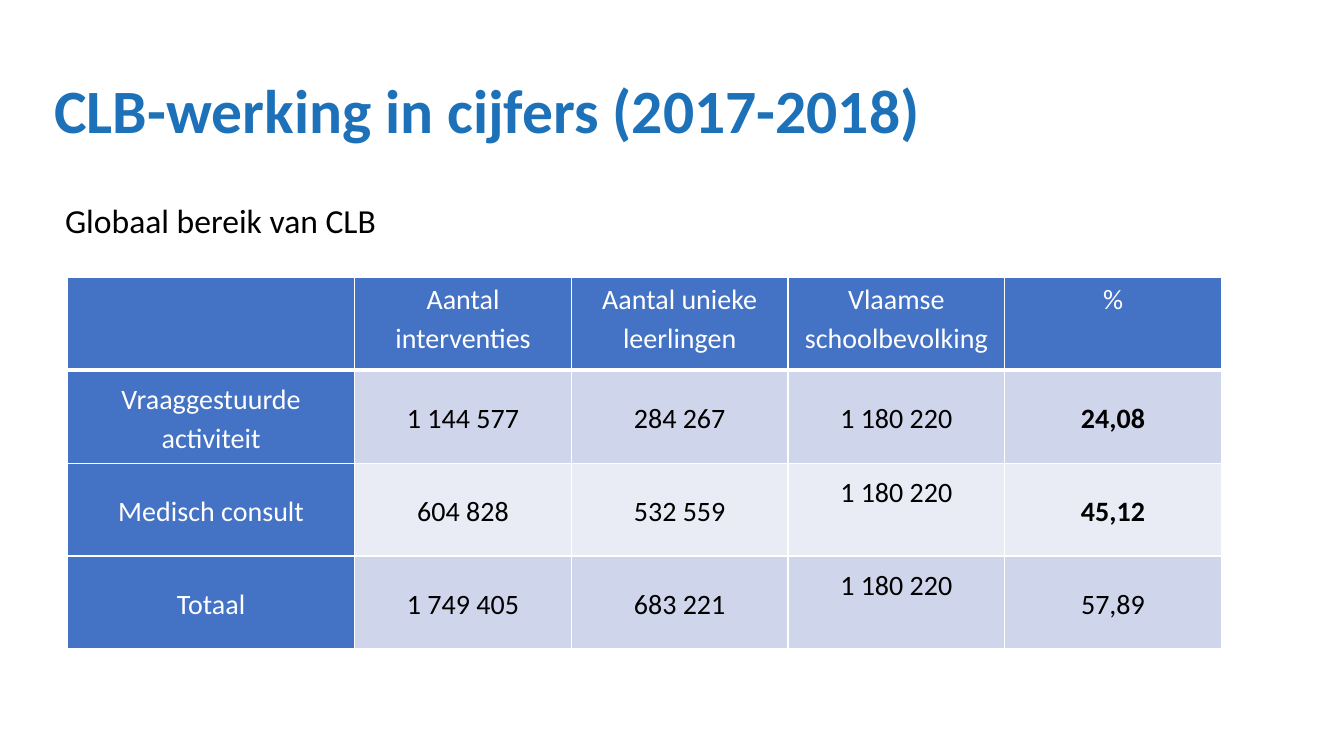
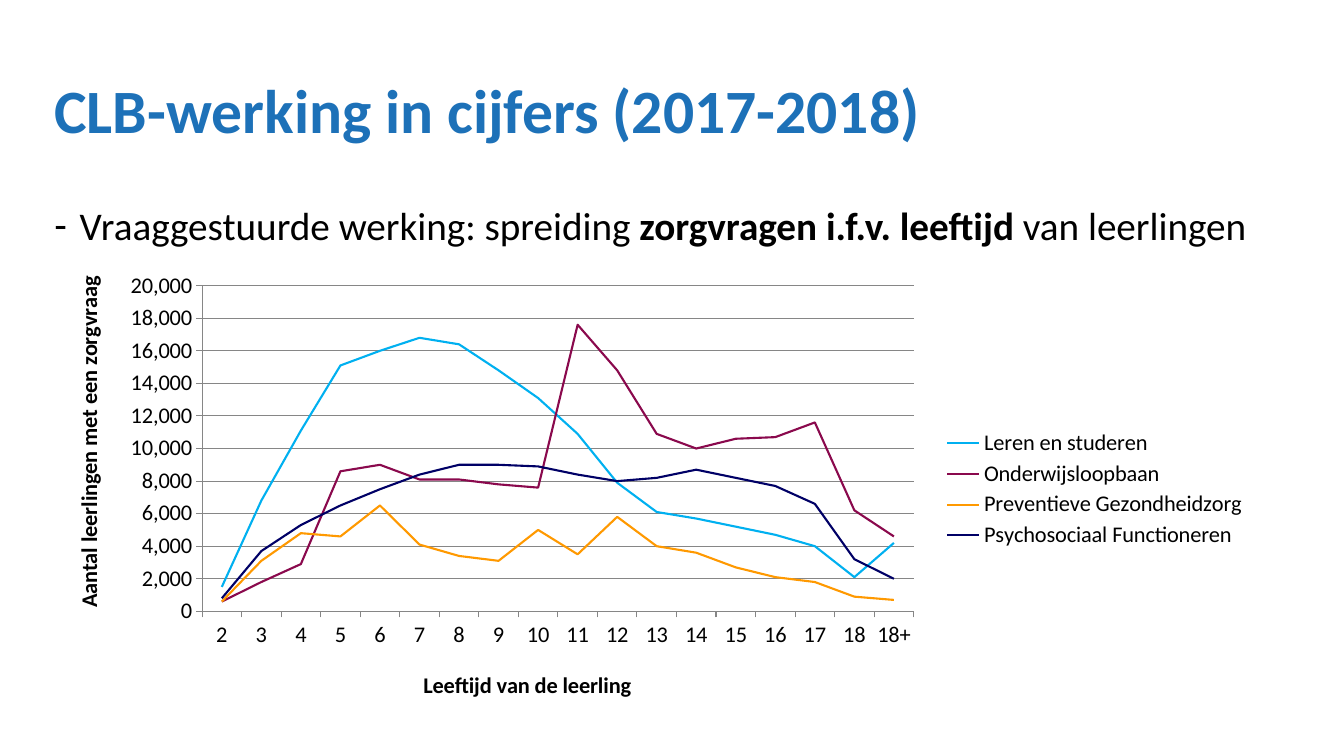
from lxml.etree import SubElement
from pptx import Presentation
from pptx.chart.data import CategoryChartData
from pptx.dml.color import RGBColor
from pptx.enum.chart import XL_CHART_TYPE, XL_LEGEND_POSITION, XL_TICK_MARK
from pptx.enum.text import MSO_ANCHOR, PP_ALIGN
from pptx.oxml.ns import qn
from pptx.util import Cm, Pt

FONT = "Calibri"
BLACK = RGBColor(0x00, 0x00, 0x00)
WHITE = RGBColor(0xFF, 0xFF, 0xFF)
TITLE_BLUE = RGBColor(0x1D, 0x71, 0xB8)
TABLE_BLUE = RGBColor(0x44, 0x72, 0xC4)
BANDS = (RGBColor(0xCF, 0xD5, 0xEA), RGBColor(0xE9, 0xEB, 0xF5))
GRID_GREY = RGBColor(0x86, 0x86, 0x86)

TITLE = "CLB-werking in cijfers (2017-2018)"

REACH = [
    ["", "Aantal interventies", "Aantal unieke leerlingen", "Vlaamse schoolbevolking", "%"],
    ["Vraaggestuurde activiteit", "1 144 577", "284 267", "1 180 220", "24,08"],
    ["Medisch consult", "604 828", "532 559", "1 180 220", "45,12"],
    ["Totaal", "1 749 405", "683 221", "1 180 220", "57,89"],
]
BOLD_CELLS = {(1, 4), (2, 4)}
RAISED_CELLS = {(2, 3), (3, 3)}

AGES = [str(age) for age in range(2, 19)] + ["18+"]
CARE_QUESTIONS = [
    ("Leren en studeren", RGBColor(0x00, 0xB0, 0xF0),
     [1500, 6800, 11100, 15100, 16000, 16800, 16400, 14800, 13100,
      10900, 7900, 6100, 5700, 5200, 4700, 4000, 2100, 4200]),
    ("Onderwijsloopbaan", RGBColor(0x8A, 0x09, 0x4D),
     [600, 1800, 2900, 8600, 9000, 8100, 8100, 7800, 7600,
      17600, 14800, 10900, 10000, 10600, 10700, 11600, 6200, 4600]),
    ("Preventieve Gezondheidzorg", RGBColor(0xFF, 0x99, 0x00),
     [600, 3100, 4800, 4600, 6500, 4100, 3400, 3100, 5000,
      3500, 5800, 4000, 3600, 2700, 2100, 1800, 900, 700]),
    ("Psychosociaal Functioneren", RGBColor(0x00, 0x00, 0x66),
     [800, 3700, 5300, 6500, 7500, 8400, 9000, 9000, 8900,
      8400, 8000, 8200, 8700, 8200, 7700, 6600, 3200, 2000]),
]


def place(part, inner=False, **fractions):
    """Give a chart part a manual layout, in fractions of the chart."""
    layout = part.find(qn("c:layout"))
    if layout is None:
        layout = SubElement(part, qn("c:layout"))
        before = [part.find(qn(tag)) for tag in ("c:tx", "c:legendPos")]
        anchor = next((item for item in before if item is not None), None)
        if anchor is None:
            part.insert(0, layout)
        else:
            anchor.addnext(layout)
    for child in list(layout):
        layout.remove(child)
    manual = SubElement(layout, qn("c:manualLayout"))
    if inner:
        SubElement(manual, qn("c:layoutTarget")).set("val", "inner")
    for name in ("x", "y"):
        SubElement(manual, qn(f"c:{name}Mode")).set("val", "edge")
    for name, value in fractions.items():
        SubElement(manual, qn(f"c:{name}")).set("val", str(value))


class SlideWriter:
    def __init__(self):
        self.deck = Presentation()
        self.deck.slide_width, self.deck.slide_height = Cm(33.87), Cm(19.05)
        self.page = None

    def new_page(self, title):
        self.page = self.deck.slides.add_slide(self.deck.slide_layouts[6])
        self.text(1.12, 1.02, 31.45, 3.68, [(title, True)], 44, TITLE_BLUE,
                  anchor=MSO_ANCHOR.MIDDLE)

    def span(self, para, text, size, color, bold=False):
        span = para.add_run()
        span.text = text
        font = span.font
        font.name, font.size, font.bold = FONT, Pt(size), bold
        font.color.rgb = color

    def text(self, left, top, width, height, spans, size, color=BLACK,
             anchor=MSO_ANCHOR.TOP, indent=0, bullet=None):
        box = self.page.shapes.add_textbox(Cm(left), Cm(top), Cm(width), Cm(height))
        frame = box.text_frame
        frame.word_wrap = True
        frame.vertical_anchor = anchor
        para = frame.paragraphs[0]
        para.line_spacing = 0.9
        properties = para._p.get_or_add_pPr()
        properties.set("marL", str(Cm(indent)))
        if bullet:
            properties.set("indent", str(-Cm(indent)))
            SubElement(properties, qn("a:buFont")).set("typeface", FONT)
            SubElement(properties, qn("a:buChar")).set("char", bullet)
        for words, bold in spans:
            self.span(para, words, size, color, bold)

    def border(self, cell, side, width):
        line = SubElement(cell._tc.get_or_add_tcPr(), qn(f"a:ln{side}"), w=str(Pt(width)))
        fill = SubElement(line, qn("a:solidFill"))
        SubElement(fill, qn("a:srgbClr")).set("val", str(WHITE))

    def table(self, left, top, widths, row_height, rows):
        table = self.page.shapes.add_table(
            len(rows), len(widths), Cm(left), Cm(top),
            Cm(sum(widths)), Cm(row_height * len(rows))).table
        for column, width in zip(table.columns, widths):
            column.width = Cm(width)
        for r, values in enumerate(rows):
            table.rows[r].height = Cm(row_height)
            for c, value in enumerate(values):
                self.cell(table.cell(r, c), r, c, value)

    def cell(self, cell, r, c, value):
        heading = r == 0 or c == 0
        for side, width in (("L", 1), ("R", 1), ("T", 3 if r == 1 else 1),
                            ("B", 3 if r == 0 else 1)):
            self.border(cell, side, width)
        cell.fill.solid()
        cell.fill.fore_color.rgb = TABLE_BLUE if heading else BANDS[(r - 1) % 2]
        cell.margin_left = cell.margin_right = Cm(0.18)
        cell.margin_top = 0
        cell.margin_bottom = Cm(0.97 if (r, c) in RAISED_CELLS else 0)
        cell.vertical_anchor = MSO_ANCHOR.TOP if r == 0 else MSO_ANCHOR.MIDDLE
        para = cell.text_frame.paragraphs[0]
        para.alignment, para.line_spacing = PP_ALIGN.CENTER, 1.15
        if value:
            self.span(para, value, 20, WHITE if heading else BLACK, (r, c) in BOLD_CELLS)

    def axis(self, axis, title, x, y):
        axis.major_tick_mark = XL_TICK_MARK.OUTSIDE
        axis.minor_tick_mark = XL_TICK_MARK.NONE
        axis.format.line.color.rgb = GRID_GREY
        self.span(axis.axis_title.text_frame.paragraphs[0], title, 16, BLACK, True)
        place(axis.axis_title._element, x=x, y=y)

    def line_chart(self, left, top, width, height, categories, series, x_title, y_title):
        data = CategoryChartData(number_format="#,##0")
        data.categories = categories
        for name, _, values in series:
            data.add_series(name, values)
        chart = self.page.shapes.add_chart(
            XL_CHART_TYPE.LINE, Cm(left), Cm(top), Cm(width), Cm(height), data).chart
        chart.has_title = False
        chart.font.name, chart.font.size = FONT, Pt(16)
        chart.font.color.rgb = BLACK
        plot = chart.plots[0]
        plot.vary_by_categories = False
        for line, (_, color, _) in zip(plot.series, series):
            line.smooth = False
            line.format.line.width = Pt(1.5)
            line.format.line.color.rgb = color

        # Axes
        self.axis(chart.category_axis, x_title, 0.31, 0.89)
        values = chart.value_axis
        self.axis(values, y_title, 0.02, 0.02)
        values.minimum_scale, values.maximum_scale, values.major_unit = 0, 20000, 2000
        values.tick_labels.number_format = "#,##0"
        values.tick_labels.number_format_is_linked = False
        values.major_gridlines.format.line.color.rgb = GRID_GREY

        # Plot and legend positions
        chart.has_legend = True
        chart.legend.position = XL_LEGEND_POSITION.RIGHT
        chart.legend.include_in_layout = False
        place(chart.legend._element, x=0.74, y=0.36, w=0.26, h=0.28)
        place(chart._chartSpace.chart.plotArea, inner=True, x=0.13, y=0.05, w=0.59, h=0.72)


def main():
    writer = SlideWriter()

    # Overall reach
    writer.new_page(TITLE)
    writer.text(1.14, 5.03, 25.43, 12.04, [("Globaal bereik van CLB", False)], 24, indent=0.25)
    writer.table(1.7, 6.99, [7.24] + [5.46] * 4, 2.34, REACH)

    # Care questions by age
    writer.new_page(TITLE)
    writer.text(1.12, 5.08, 31.45, 12.09,
                [("Vraaggestuurde werking: spreiding ", False),
                 ("zorgvragen i.f.v. leeftijd", True),
                 (" van leerlingen", False)], 28, indent=0.64, bullet="⁃")
    writer.line_chart(1.14, 6.63, 30.4, 11.4, AGES, CARE_QUESTIONS,
                      "Leeftijd van de leerling", "Aantal leerlingen met een zorgvraag")

    writer.deck.save("out.pptx")


if __name__ == "__main__":
    main()
